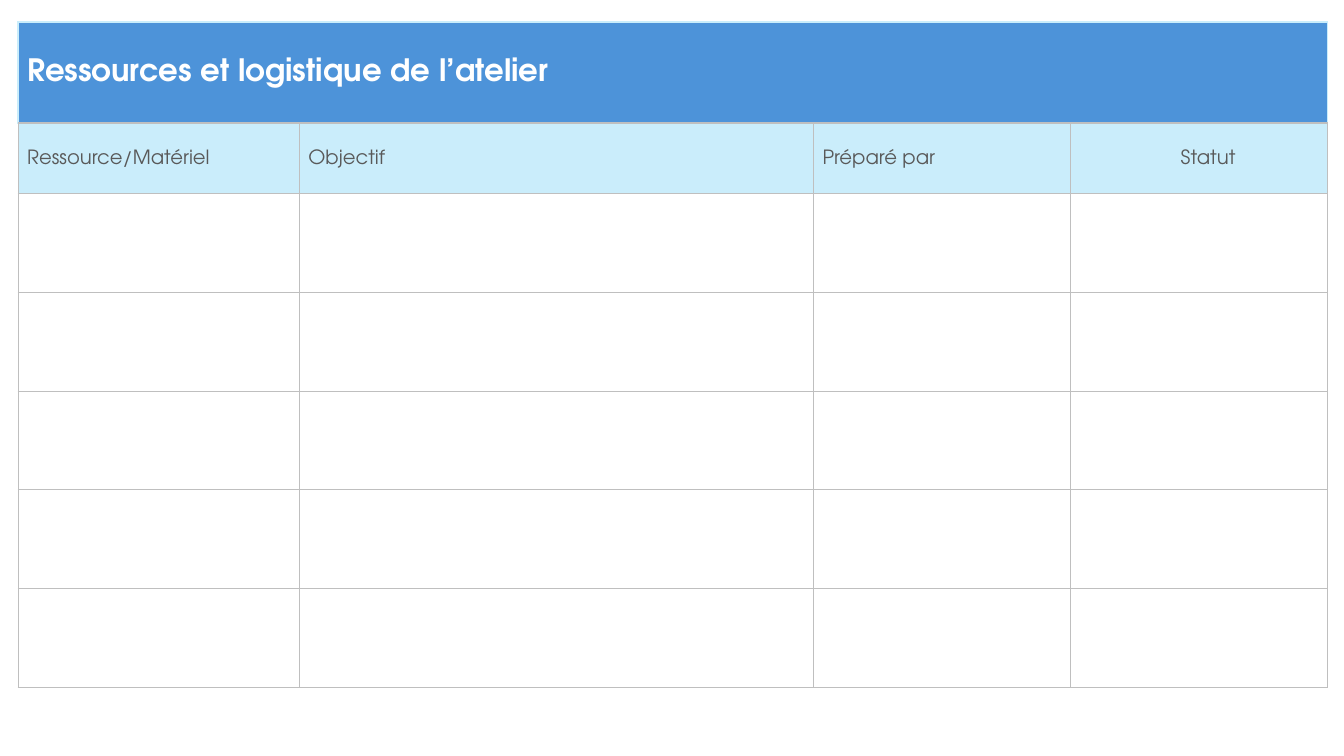
from dataclasses import dataclass

from lxml import etree
from pptx import Presentation
from pptx.dml.color import RGBColor
from pptx.enum import text
from pptx.oxml import ns
from pptx.table import _Cell
from pptx.util import Pt

WHITE = RGBColor(0xFF, 0xFF, 0xFF)
BLUE = RGBColor(0x4D, 0x93, 0xD9)
PALE_BLUE = RGBColor(0xCA, 0xED, 0xFB)
TEXT_GREY = RGBColor(0x59, 0x59, 0x59)
BORDER_GREY = RGBColor(0xBF, 0xBF, 0xBF)

FONT = "TeX Gyre Adventor"
SLIDE_WIDTH, SLIDE_HEIGHT = 960, 540
TABLE_LEFT, TABLE_TOP = 12.96, 15.84
TITLE_HEIGHT, HEADING_HEIGHT, ENTRY_HEIGHT = 72, 50.4, 70.56
ENTRY_COUNT = 5
TITLE = "Ressources et logistique de l’atelier"


@dataclass(frozen=True)
class Column:
    heading: str
    width: float
    indent: float = 6.5
    alignment: text.PP_ALIGN = text.PP_ALIGN.LEFT


@dataclass(frozen=True)
class Border:
    color: RGBColor
    width: float


@dataclass(frozen=True)
class TextStyle:
    size: float
    color: RGBColor
    bold: bool


COLUMNS = (
    Column("Ressource/Matériel", 200.88),
    Column("Objectif", 367.2),
    Column("Préparé par", 183.6),
    Column("Statut", 183.6, 13.7, text.PP_ALIGN.CENTER),
)
GRID = Border(BORDER_GREY, 1)
TITLE_EDGE = Border(PALE_BLUE, 1.5)
TITLE_STYLE = TextStyle(22, WHITE, True)
HEADING_STYLE = TextStyle(14, TEXT_GREY, False)


def set_borders(cell: _Cell, edge: Border, bottom: Border) -> None:
    """Draw the left, right and top sides with edge, the lower side with bottom."""
    properties = cell._tc.get_or_add_tcPr()
    for side, border in (("L", edge), ("R", edge), ("T", edge), ("B", bottom)):
        line = etree.SubElement(
            properties, ns.qn(f"a:ln{side}"), w=str(Pt(border.width))
        )
        fill = etree.SubElement(line, ns.qn("a:solidFill"))
        etree.SubElement(fill, ns.qn("a:srgbClr"), val=str(border.color))


def fill_cell(cell: _Cell, color: RGBColor) -> None:
    cell.fill.solid()
    cell.fill.fore_color.rgb = color


def write_cell(
    cell: _Cell, words: str, style: TextStyle, indent: float, alignment: text.PP_ALIGN
) -> None:
    cell.vertical_anchor = text.MSO_ANCHOR.MIDDLE
    cell.margin_left = Pt(indent)
    cell.margin_right = cell.margin_top = Pt(0.7)
    cell.margin_bottom = Pt(0)
    paragraph = cell.text_frame.paragraphs[0]
    paragraph.alignment = alignment
    run = paragraph.add_run()
    run.text = words
    run.font.name = FONT
    run.font.size = Pt(style.size)
    run.font.bold = style.bold
    run.font.color.rgb = style.color


def main() -> None:
    presentation = Presentation()
    presentation.slide_width = Pt(SLIDE_WIDTH)
    presentation.slide_height = Pt(SLIDE_HEIGHT)
    slide = presentation.slides.add_slide(presentation.slide_layouts[6])

    row_heights = [TITLE_HEIGHT, HEADING_HEIGHT] + [ENTRY_HEIGHT] * ENTRY_COUNT
    table = slide.shapes.add_table(
        len(row_heights),
        len(COLUMNS),
        Pt(TABLE_LEFT),
        Pt(TABLE_TOP),
        Pt(sum(column.width for column in COLUMNS)),
        Pt(sum(row_heights)),
    ).table
    table.first_row = table.horz_banding = False
    for row, height in zip(table.rows, row_heights):
        row.height = Pt(height)

    for index, column in enumerate(COLUMNS):
        table.columns[index].width = Pt(column.width)
        for row_index in range(len(row_heights)):
            cell = table.cell(row_index, index)
            set_borders(cell, GRID if row_index else TITLE_EDGE, GRID)
            if row_index > 1:
                cell.fill.background()
        heading = table.cell(1, index)
        fill_cell(heading, PALE_BLUE)
        write_cell(
            heading, column.heading, HEADING_STYLE, column.indent, column.alignment
        )

    title = table.cell(0, 0)
    title.merge(table.cell(0, len(COLUMNS) - 1))
    fill_cell(title, BLUE)
    write_cell(title, TITLE, TITLE_STYLE, COLUMNS[0].indent, text.PP_ALIGN.LEFT)

    presentation.save("out.pptx")


if __name__ == "__main__":
    main()
